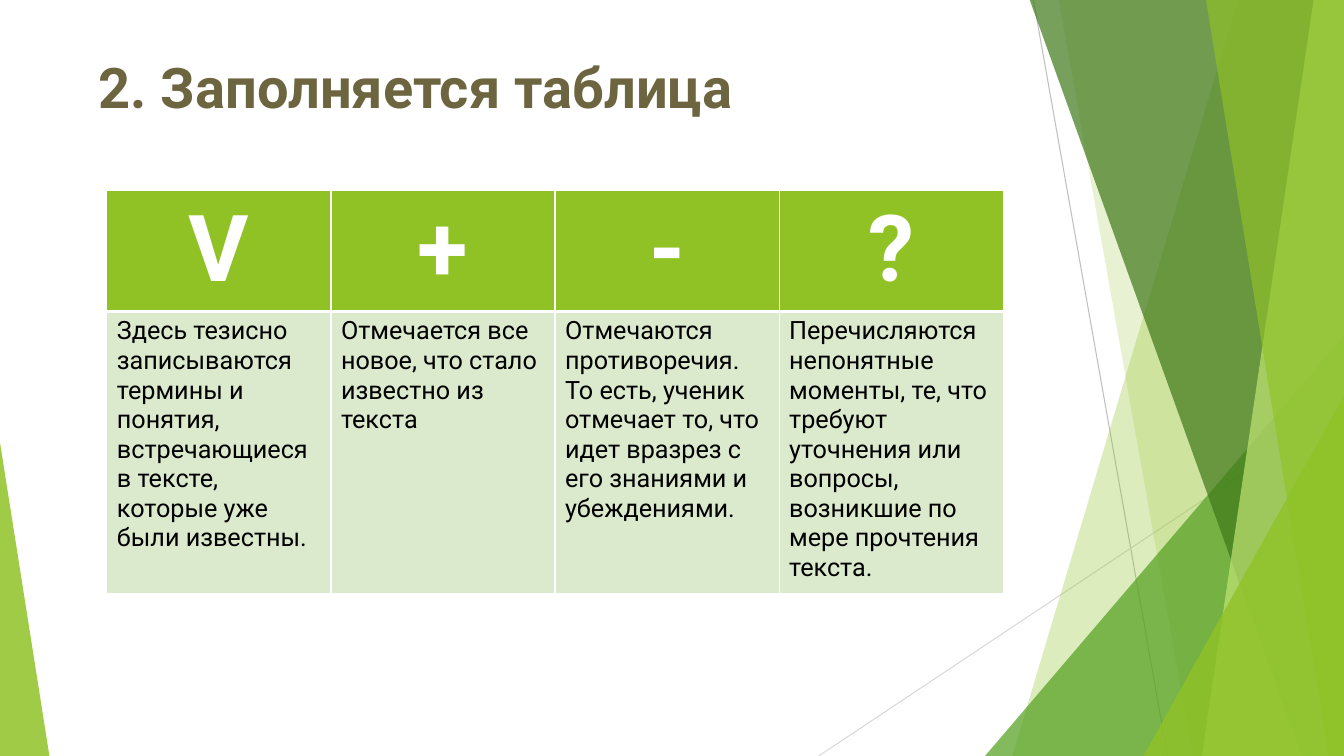
"""Build a slide with a four-column marking table beside green facets."""
from dataclasses import dataclass

from lxml.etree import SubElement
from pptx import Presentation
from pptx.dml.color import RGBColor
from pptx.enum.shapes import MSO_CONNECTOR, MSO_SHAPE
from pptx.enum.text import PP_ALIGN
from pptx.oxml.ns import qn
from pptx.shapes.autoshape import Shape
from pptx.slide import Slide
from pptx.table import _Cell as Cell
from pptx.text.text import _Paragraph as Para
from pptx.util import Inches, Pt

Point = tuple[float, float]


@dataclass(frozen=True)
class Theme:
    """Colours, font and type sizes."""
    font: str = "Roboto"
    lime: str = "90C226"
    leaf: str = "54A021"
    moss: str = "3F7819"
    pale: str = "C0E474"
    mint: str = "DBE9CD"
    olive: str = "6D6540"
    white: str = "FFFFFF"
    black: str = "000000"
    grey: str = "BFBFBF"
    mist: str = "D9D9D9"
    title: int = 40
    mark: int = 66
    body: int = 18


@dataclass(frozen=True)
class Line:
    """A thin straight line."""
    start: Point
    end: Point
    color: str


@dataclass(frozen=True)
class Facet:
    """A see-through band reaching the right edge, given by its left side."""
    top: float
    foot: float
    color: str
    alpha: int


@dataclass(frozen=True)
class Wedge:
    """A see-through triangle standing on the bottom edge."""
    left: float
    top: float
    width: float
    apex: float
    color: str
    alpha: int


@dataclass(frozen=True)
class Column:
    """A mark and what is written under it."""
    mark: str
    note: str


THEME = Theme()
WIDE, HIGH = 13.33, 7.5
LINES = [
    Line((10.25, 0), (11.58, HIGH), THEME.grey),
    Line((WIDE, 4.03), (8.12, HIGH), THEME.mist),
]
PARTS = [
    Facet(12.28, 10.04, THEME.lime, 30),
    Facet(10.5, 11.83, THEME.lime, 20),
    Wedge(9.77, 3.33, 3.56, 1, THEME.leaf, 72),
    Facet(10.21, 12.91, THEME.moss, 70),
    Facet(13.03, 11.92, THEME.pale, 70),
    Facet(11.96, 13.18, THEME.lime, 65),
    Wedge(11.34, 3.93, 1.99, 1, THEME.lime, 80),
    Wedge(0, 4.39, 0.49, 0, THEME.lime, 85),
]
COLUMNS = [
    Column("V", "Здесь тезисно записываются термины и понятия, "
                "встречающиеся в тексте, которые уже были известны."),
    Column("+", "Отмечается все новое, что стало известно из текста"),
    Column("-", "Отмечаются противоречия. То есть, ученик отмечает то, "
                "что идет вразрез с его знаниями и убеждениями."),
    Column("?", "Перечисляются непонятные моменты, те, что требуют уточнения "
                "или вопросы, возникшие по мере прочтения текста."),
]


def paint(shape: Shape, color: str, alpha: int) -> None:
    """Fill a shape with a see-through colour and no outline."""
    shape.shadow.inherit = False
    shape.line.fill.background()
    shape.fill.solid()
    shape.fill.fore_color.rgb = RGBColor.from_string(color)
    tint = shape._element.spPr.find(qn("a:solidFill"))[0]
    SubElement(tint, qn("a:alpha"), val=str(alpha * 1000))


def draw_line(slide: Slide, line: Line) -> None:
    """Draw a thin line."""
    ends = [Inches(n) for n in line.start + line.end]
    link = slide.shapes.add_connector(MSO_CONNECTOR.STRAIGHT, *ends)
    link.line.width = Pt(0.75)
    link.line.color.rgb = RGBColor.from_string(line.color)
    SubElement(link._element.spPr, qn("a:effectLst"))


def draw_facet(slide: Slide, facet: Facet) -> None:
    """Draw a band from its left side to the right edge."""
    top = -0.01
    spots = [(facet.top, top), (WIDE, top), (WIDE, HIGH), (facet.foot, HIGH)]
    first, *rest = [(Inches(x), Inches(y)) for x, y in spots]
    pen = slide.shapes.build_freeform(*first)
    pen.add_line_segments(rest, close=True)
    paint(pen.convert_to_shape(), facet.color, facet.alpha)


def draw_wedge(slide: Slide, wedge: Wedge) -> None:
    """Draw a triangle down to the bottom edge."""
    shape = slide.shapes.add_shape(
        MSO_SHAPE.ISOSCELES_TRIANGLE, Inches(wedge.left), Inches(wedge.top),
        Inches(wedge.width), Inches(HIGH - wedge.top))
    shape.adjustments[0] = wedge.apex
    paint(shape, wedge.color, wedge.alpha)


def write(para: Para, text: str, size: int, color: str, bold: bool) -> None:
    """Add one styled run."""
    run = para.add_run()
    run.text = text
    run.font.name = THEME.font
    run.font.size = Pt(size)
    run.font.bold = bold
    run.font.color.rgb = RGBColor.from_string(color)


def dress(cell: Cell, fill: str, top: int, foot: int) -> None:
    """Fill a cell and give it white borders."""
    cell.fill.solid()
    cell.fill.fore_color.rgb = RGBColor.from_string(fill)
    props = cell._tc.get_or_add_tcPr()
    sides = {"L": 1, "R": 1, "T": top, "B": foot}
    for spot, (side, width) in enumerate(sides.items()):
        edge = SubElement(props, qn(f"a:ln{side}"), w=str(Pt(width)))
        ink = SubElement(edge, qn("a:solidFill"))
        SubElement(ink, qn("a:srgbClr"), val=THEME.white)
        props.insert(spot, edge)


def draw_title(slide: Slide) -> None:
    """Write the heading."""
    box = slide.shapes.add_textbox(
        Inches(0.88), Inches(0.47), Inches(11.5), Inches(4.76))
    box.text_frame.word_wrap = True
    write(box.text_frame.paragraphs[0], "2. Заполняется таблица",
          THEME.title, THEME.olive, True)


def draw_table(slide: Slide) -> None:
    """Draw the table of marks and notes."""
    table = slide.shapes.add_table(
        2, len(COLUMNS), Inches(1.06), Inches(1.89),
        Inches(8.89), Inches(3.9)).table
    for row, height in zip(table.rows, (1.17, 2.73)):
        row.height = Inches(height)
    for spot, column in enumerate(COLUMNS):
        head, body = table.cell(0, spot), table.cell(1, spot)
        dress(head, THEME.lime, 1, 3)
        dress(body, THEME.mint, 3, 1)
        para = head.text_frame.paragraphs[0]
        para.alignment = PP_ALIGN.CENTER
        write(para, column.mark, THEME.mark, THEME.white, True)
        write(body.text_frame.paragraphs[0], column.note,
              THEME.body, THEME.black, False)


def main() -> None:
    """Build and save the slide."""
    deck = Presentation()
    deck.slide_width, deck.slide_height = Inches(WIDE), Inches(HIGH)
    slide = deck.slides.add_slide(deck.slide_layouts[6])
    for line in LINES:
        draw_line(slide, line)
    for part in PARTS:
        if isinstance(part, Facet):
            draw_facet(slide, part)
        else:
            draw_wedge(slide, part)
    draw_title(slide)
    draw_table(slide)
    deck.save("out.pptx")


if __name__ == "__main__":
    main()
